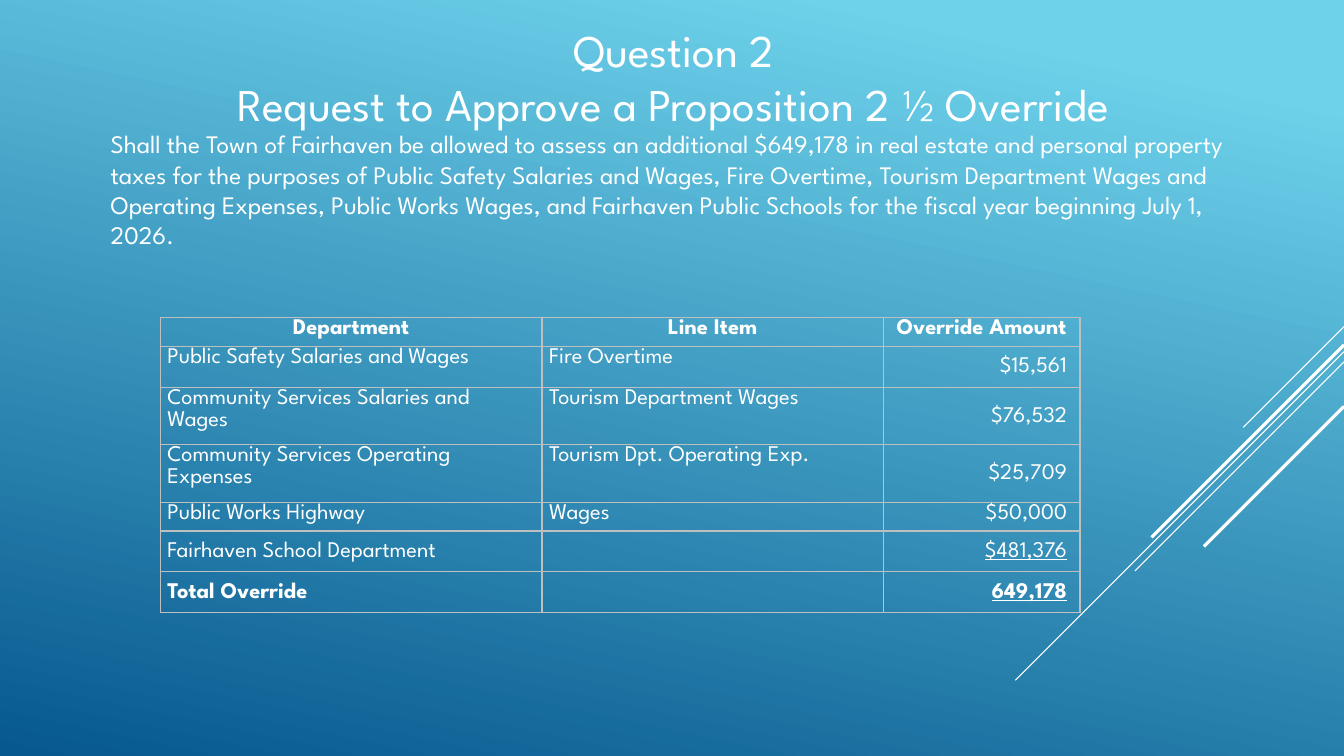
"""Build the Question 2 override slide with its department table."""
from dataclasses import dataclass

from lxml import etree
from pptx import Presentation
from pptx.dml.color import RGBColor
from pptx.enum.shapes import MSO_CONNECTOR
from pptx.enum.text import MSO_ANCHOR, PP_ALIGN
from pptx.oxml.ns import qn
from pptx.util import Cm, Pt

STRAIGHT = MSO_CONNECTOR.STRAIGHT
TOP, MIDDLE = MSO_ANCHOR.TOP, MSO_ANCHOR.MIDDLE
LEFT, CENTER, RIGHT = PP_ALIGN.LEFT, PP_ALIGN.CENTER, PP_ALIGN.RIGHT


@dataclass(frozen=True)
class Theme:
    font: str = "League Spartan"
    text: str = "FFFFFF"
    border: str = "BFBFBF"
    gradient: tuple = ((0.1, "6ED2EB"), (1.0, "06588E"))
    gradient_angle: float = 258
    title_size: float = 32.4
    body_size: float = 18
    table_size: float = 16
    border_width: float = 1


@dataclass(frozen=True)
class Ray:
    top: float
    reach: float
    width: float


@dataclass(frozen=True)
class TableRow:
    texts: tuple
    height: float
    anchors: tuple = (TOP, TOP, MIDDLE)
    alignments: tuple = (LEFT, LEFT, RIGHT)
    bold: bool = False
    underlined_amount: bool = False


THEME = Theme()
SLIDE_WIDTH, SLIDE_HEIGHT = 33.87, 19.05
TITLE_LINES = ("Question 2", "Request to Approve a Proposition 2 ½ Override")
QUESTION = (
    "Shall the Town of Fairhaven be allowed to assess an additional $649,178 in real estate "
    "and personal property taxes for the purposes of Public Safety Salaries and Wages, Fire "
    "Overtime, Tourism Department Wages and Operating Expenses, Public Works Wages, and "
    "Fairhaven Public Schools for the fiscal year beginning July 1, 2026."
)
RAYS = (
    Ray(8.23, 2.54, 0.75),
    Ray(8.86, 8.28, 0.75),
    Ray(9.12, 5.27, 0.75),
    Ray(8.69, 4.85, 2.25),
    Ray(10.24, 3.53, 2.25),
)
COLUMN_WIDTHS = (9.62, 8.6, 4.96)
ALL_TOP, ALL_MIDDLE = (TOP,) * 3, (MIDDLE,) * 3
ROWS = (
    TableRow(("Department", "Line Item", "Override Amount"), 0.72, ALL_TOP, (CENTER,) * 3, True),
    TableRow(("Public Safety Salaries and Wages", "Fire Overtime", "$15,561"), 1.03),
    TableRow(("Community Services Salaries and Wages", "Tourism Department Wages", "$76,532"), 1.45),
    TableRow(("Community Services Operating Expenses", "Tourism Dpt. Operating Exp.", "$25,709"), 1.45),
    TableRow(("Public Works Highway", "Wages", "$50,000"), 0.72, ALL_TOP),
    TableRow(("Fairhaven School Department", "", "$481,376"), 1.03, ALL_MIDDLE, underlined_amount=True),
    TableRow(("Total Override", "", "649,178"), 1.03, ALL_MIDDLE, bold=True, underlined_amount=True),
)


def add_run(paragraph, text: str, size: float, bold: bool = False, underline: bool = False) -> None:
    run = paragraph.add_run()
    run.text = text
    run.font.name = THEME.font
    run.font.size = Pt(size)
    run.font.bold = bold
    run.font.underline = underline
    run.font.color.rgb = RGBColor.from_string(THEME.text)


def paint_background(slide) -> None:
    fill = slide.background.fill
    fill.gradient()
    fill.gradient_angle = THEME.gradient_angle
    for stop, (position, color) in zip(fill.gradient_stops, THEME.gradient):
        stop.position = position
        stop.color.rgb = RGBColor.from_string(color)


def add_ray(slide, ray: Ray) -> None:
    connector = slide.shapes.add_connector(
        STRAIGHT, Cm(SLIDE_WIDTH), Cm(ray.top), Cm(SLIDE_WIDTH - ray.reach), Cm(ray.top + ray.reach)
    )
    connector.line.color.rgb = RGBColor.from_string(THEME.text)
    connector.line.width = Pt(ray.width)
    etree.SubElement(connector.element.spPr, qn("a:effectLst"))


def fill_title(slide) -> None:
    title = slide.shapes.title
    title.left, title.top, title.width, title.height = Cm(3.73), Cm(0.61), Cm(26.49), Cm(2.62)
    title.text_frame.vertical_anchor = MIDDLE
    paragraph = title.text_frame.paragraphs[0]
    paragraph.alignment = CENTER
    for index, line in enumerate(TITLE_LINES):
        if index:
            paragraph.add_line_break()
        add_run(paragraph, line, THEME.title_size)


def add_question(slide) -> None:
    box = slide.shapes.add_textbox(Cm(2.54), Cm(3.12), Cm(28.78), Cm(3.33))
    box.text_frame.word_wrap = True
    add_run(box.text_frame.paragraphs[0], QUESTION, THEME.body_size)


def add_borders(cell) -> None:
    properties = cell._tc.get_or_add_tcPr()
    for index, side in enumerate(("a:lnL", "a:lnR", "a:lnT", "a:lnB")):
        line = etree.Element(qn(side), w=str(Pt(THEME.border_width)))
        solid = etree.SubElement(line, qn("a:solidFill"))
        etree.SubElement(solid, qn("a:srgbClr"), val=THEME.border)
        properties.insert(index, line)


def fill_cell(cell, row: TableRow, column: int) -> None:
    alignment = row.alignments[column]
    cell.fill.background()
    add_borders(cell)
    cell.vertical_anchor = row.anchors[column]
    cell.margin_left = Cm(0.18)
    cell.margin_right = Cm(0.33 if alignment == RIGHT else 0.18)
    cell.margin_top = cell.margin_bottom = 0
    paragraph = cell.text_frame.paragraphs[0]
    paragraph.alignment = alignment
    paragraph.line_spacing = 1.07
    paragraph.space_after = Pt(8)
    if row.texts[column]:
        underline = row.underlined_amount and alignment == RIGHT
        add_run(paragraph, row.texts[column], THEME.table_size, row.bold, underline)


def add_override_table(slide) -> None:
    height = sum(row.height for row in ROWS)
    frame = slide.shapes.add_table(
        len(ROWS), len(COLUMN_WIDTHS), Cm(4.04), Cm(8), Cm(sum(COLUMN_WIDTHS)), Cm(height)
    )
    table = frame.table
    table.first_row = table.horz_banding = False
    for column, width in zip(table.columns, COLUMN_WIDTHS):
        column.width = Cm(width)
    for row_index, row in enumerate(ROWS):
        table.rows[row_index].height = Cm(row.height)
        for column_index in range(len(COLUMN_WIDTHS)):
            fill_cell(table.cell(row_index, column_index), row, column_index)


def main() -> None:
    presentation = Presentation()
    presentation.slide_width, presentation.slide_height = Cm(SLIDE_WIDTH), Cm(SLIDE_HEIGHT)
    slide = presentation.slides.add_slide(presentation.slide_layouts.get_by_name("Title Only"))
    paint_background(slide)
    for ray in RAYS:
        add_ray(slide, ray)
    fill_title(slide)
    add_question(slide)
    add_override_table(slide)
    presentation.save("out.pptx")


if __name__ == "__main__":
    main()
